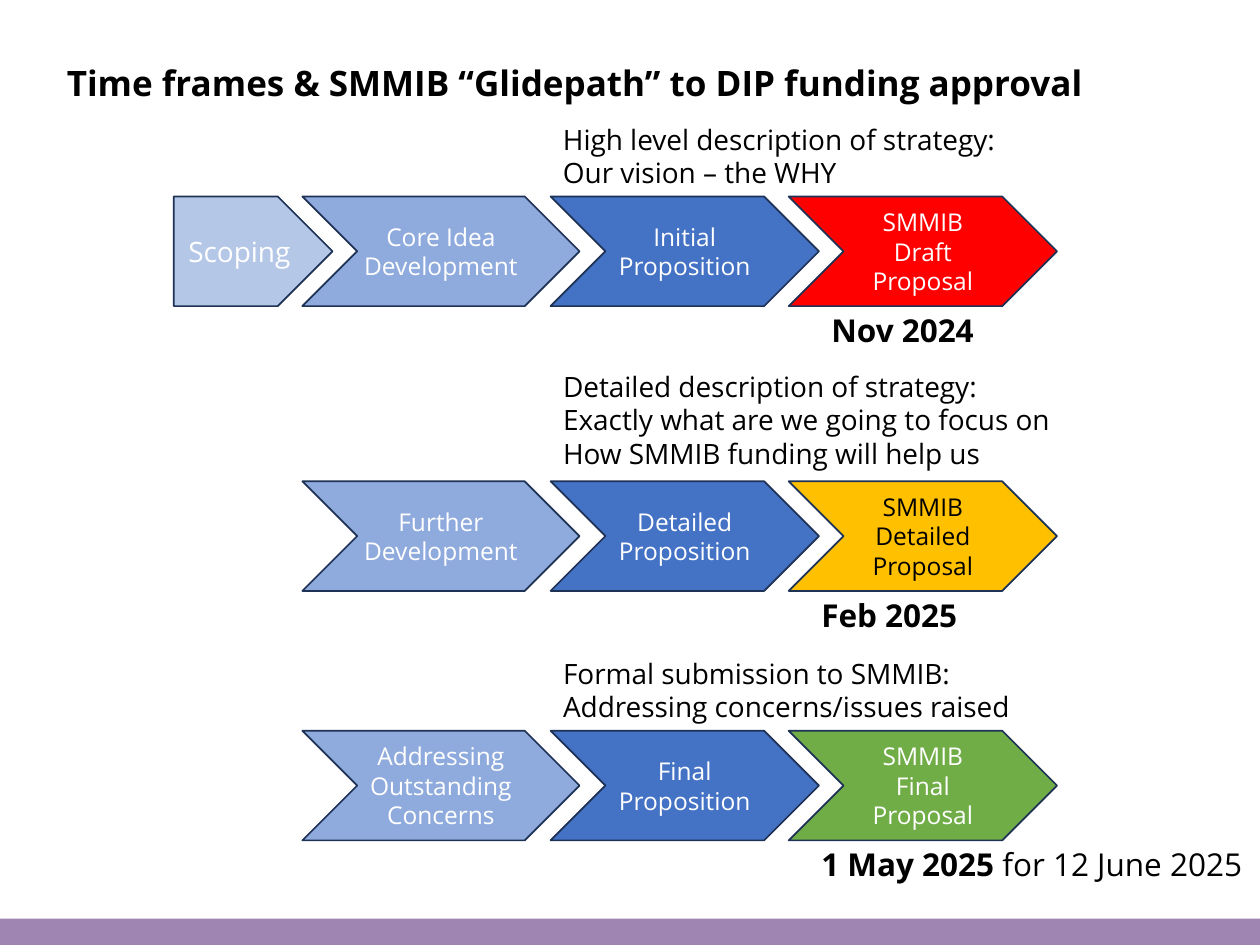
from dataclasses import dataclass

from pptx import Presentation
from pptx.dml.color import RGBColor
from pptx.enum.shapes import MSO_SHAPE
from pptx.enum.text import MSO_ANCHOR, MSO_AUTO_SIZE, PP_ALIGN
from pptx.util import Inches, Pt

RECT, PENTAGON, CHEVRON = MSO_SHAPE.RECTANGLE, MSO_SHAPE.PENTAGON, MSO_SHAPE.CHEVRON
TOP, MIDDLE = MSO_ANCHOR.TOP, MSO_ANCHOR.MIDDLE
LEFT, CENTER = PP_ALIGN.LEFT, PP_ALIGN.CENTER
FIT_SHAPE = MSO_AUTO_SIZE.SHAPE_TO_FIT_TEXT


@dataclass(frozen=True)
class Theme:
    font: str = "Open Sans"
    title: int = 20
    date: int = 18
    note: int = 16
    step: int = 14
    black: str = "000000"
    white: str = "FFFFFF"
    outline: str = "1E3256"
    band: str = "9F85B1"
    scoping: str = "B4C7E7"
    develop: str = "8FAADC"
    propose: str = "4472C4"
    draft: str = "FF0000"
    detailed: str = "FFC000"
    final: str = "70AD47"


THEME = Theme()
SLIDE_W, SLIDE_H = 10, 7.5
BAND_H = 0.21
STEP_H = 0.87
NOTE_LINE, NOTE_PAD = 0.27, 0.1
DATE_H = 0.4
# Left edge and width of each step column
COLUMNS = [(2.4, 2.2), (4.37, 2.13), (6.26, 2.13)]
STEP_FILLS = [THEME.develop, THEME.propose]

# note_w: note width, note_gap: space between note and steps, date_box: left and width
STAGES = [
    dict(top=1.56, color=THEME.draft, ink=THEME.white,
         note=["High level description of strategy:", "Our vision – the WHY"],
         note_w=3.67, note_gap=0,
         steps=[["Core Idea", "Development"], ["Initial", "Proposition"],
                ["SMMIB", "Draft Proposal"]],
         date=[("Nov 2024", True)], date_box=(6.5, 1.34)),
    dict(top=3.82, color=THEME.detailed, ink=THEME.black,
         note=["Detailed description of strategy:",
               "Exactly what are we going to focus on",
               "How SMMIB funding will help us"],
         note_w=4.11, note_gap=0.03,
         steps=[["Further", "Development"], ["Detailed Proposition"],
                ["SMMIB", "Detailed", "Proposal"]],
         date=[("Feb 2025", True)], date_box=(6.42, 1.29)),
    dict(top=5.8, color=THEME.final, ink=THEME.white,
         note=["Formal submission to SMMIB:", "Addressing concerns/issues raised"],
         note_w=3.79, note_gap=0,
         steps=[["Addressing", "Outstanding", "Concerns"], ["Final", "Proposition"],
                ["SMMIB", "Final", "Proposal"]],
         date=[("1 May 2025", True), (" for 12 June 2025", False)],
         date_box=(6.42, 3.79)),
]


def write(tf, lines, size, color=THEME.black, align=LEFT, anchor=TOP,
          wrap=False, inset=None):
    """Fill a text frame; each line is a list of (text, bold) runs."""
    tf.word_wrap = wrap
    tf.vertical_anchor = anchor
    if inset is not None:
        tf.margin_left = tf.margin_right = tf.margin_top = tf.margin_bottom = Inches(inset)
    for i, runs in enumerate(lines):
        p = tf.paragraphs[0] if i == 0 else tf.add_paragraph()
        p.alignment = align
        for text, bold in runs:
            r = p.add_run()
            r.text = text
            r.font.name = THEME.font
            r.font.size = Pt(size)
            r.font.bold = bold
            r.font.color.rgb = RGBColor.from_string(color)


def plain(lines):
    return [[(line, False)] for line in lines]


def add_block(s, kind, box, fill, line=None):
    sp = s.shapes.add_shape(kind, *map(Inches, box))
    sp.shadow.inherit = False
    sp.fill.solid()
    sp.fill.fore_color.rgb = RGBColor.from_string(fill)
    if line:
        sp.line.color.rgb = RGBColor.from_string(line)
        sp.line.width = Pt(1)
    else:
        sp.line.fill.background()
    return sp


def add_step(s, kind, box, lines, fill, color=THEME.white, size=THEME.step, inset=0.04):
    sp = add_block(s, kind, box, fill, THEME.outline)
    write(sp.text_frame, plain(lines), size, color=color, align=CENTER,
          anchor=MIDDLE, wrap=True, inset=inset)


def add_text(s, box, lines, size, **fmt):
    tf = s.shapes.add_textbox(*map(Inches, box)).text_frame
    write(tf, lines, size, **fmt)
    tf.auto_size = FIT_SHAPE


def add_title(s, box, text):
    sp = s.shapes.title
    sp.left, sp.top, sp.width, sp.height = map(Inches, box)
    write(sp.text_frame, [[(text, True)]], THEME.title)
    sp.text_frame.auto_size = FIT_SHAPE


def add_stage(s, stage):
    """Place the note above, the three steps, and the date below."""
    top = stage["top"]
    note_h = NOTE_LINE * len(stage["note"]) + NOTE_PAD
    note_top = top - stage["note_gap"] - note_h
    fills = STEP_FILLS + [stage["color"]]
    inks = [THEME.white, THEME.white, stage["ink"]]
    for (x, w), lines, fill, ink in zip(COLUMNS, stage["steps"], fills, inks):
        add_step(s, CHEVRON, (x, top, w, STEP_H), lines, fill, color=ink)
    add_text(s, (COLUMNS[1][0], note_top, stage["note_w"], note_h),
             plain(stage["note"]), THEME.note)
    x, w = stage["date_box"]
    add_text(s, (x, top + STEP_H - 0.01, w, DATE_H), [stage["date"]], THEME.date)


def main():
    prs = Presentation()
    prs.slide_width, prs.slide_height = Inches(SLIDE_W), Inches(SLIDE_H)
    s = prs.slides.add_slide(prs.slide_layouts[5])
    add_block(s, RECT, (0, SLIDE_H - BAND_H, SLIDE_W, BAND_H), THEME.band)
    add_title(s, (0.43, 0.44, 8.27, 0.44),
              "Time frames & SMMIB “Glidepath” to DIP funding approval")
    add_step(s, PENTAGON, (1.38, STAGES[0]["top"], 1.26, STEP_H), ["Scoping"],
             THEME.scoping, size=THEME.note, inset=None)
    for stage in STAGES:
        add_stage(s, stage)
    prs.save("out.pptx")


if __name__ == "__main__":
    main()
